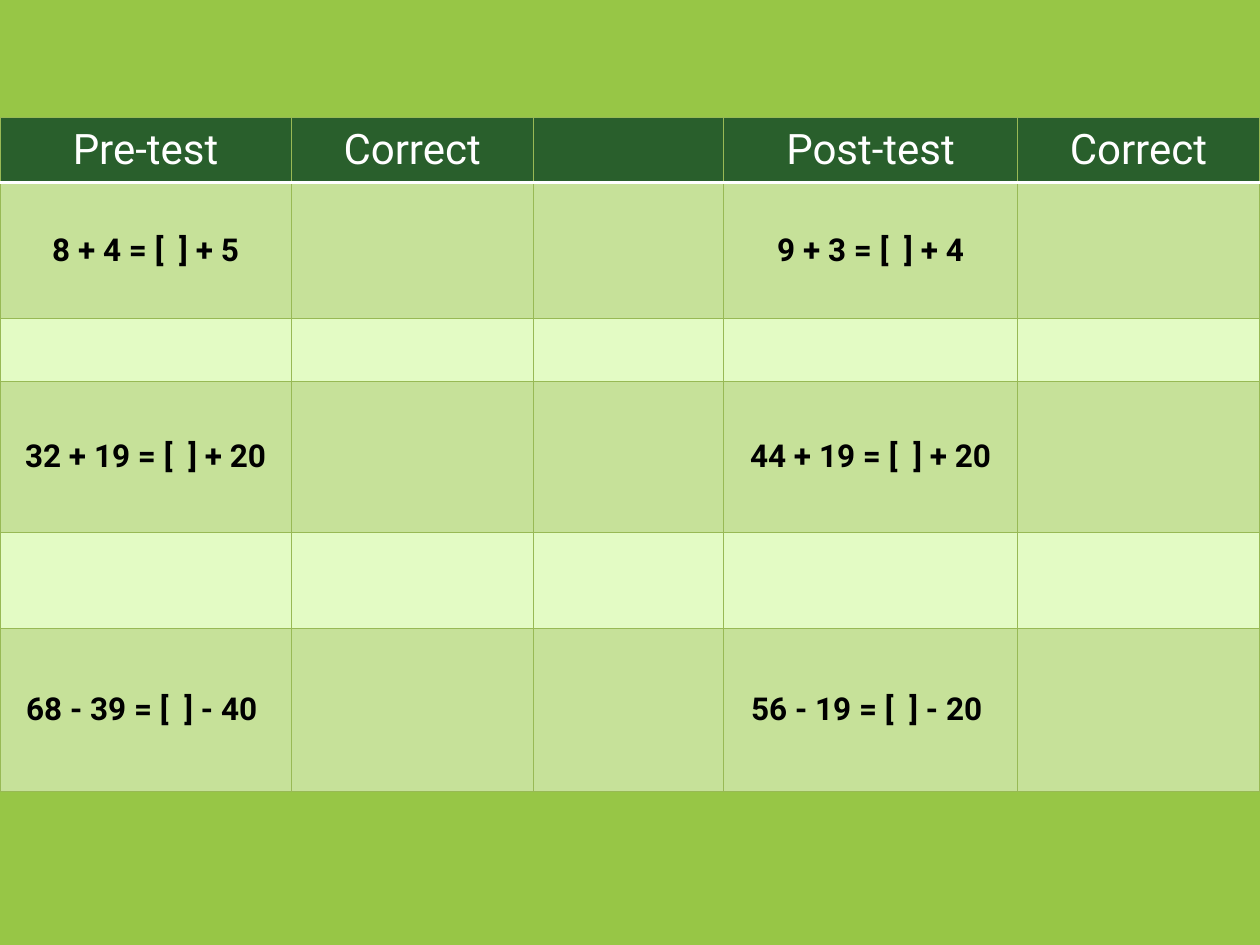
from dataclasses import dataclass
from lxml.etree import SubElement as Sub
from pptx import Presentation
from pptx.dml.color import RGBColor as Rgb
from pptx.enum.shapes import MSO_SHAPE as Kind
from pptx.enum.text import MSO_ANCHOR as Anchor, PP_ALIGN as Align
from pptx.oxml.ns import qn
from pptx.util import Cm, Pt


@dataclass(frozen=True)
class Theme:
    font: str = "Roboto"
    page: str = "97C646"
    head: str = "295F2C"
    band: str = "C6E199"
    pale: str = "E3FBC4"
    rule: str = "98B955"
    white: str = "FFFFFF"
    ink: str = "000000"
    large: int = 24
    small: int = 18
    thin: float = 0.75
    thick: float = 2


LOOK = Theme()
COLS = [5.87, 4.88, 3.84, 5.92, 4.88]
ROWS = [1.32, 2.74, 1.27, 3.05, 1.93, 3.28]
TEXT = [
    ["Pre-test", "Correct", "", "Post-test", "Correct"],
    ["8 + 4 = [  ] + 5", "", "", "9 + 3 = [  ] + 4", ""],
    [""] * 5,
    ["32 + 19 = [  ] + 20", "", "", "44 + 19 = [  ] + 20", ""],
    [""] * 5,
    ["68 - 39 = [  ] - 40 ", "", "", "56 - 19 = [  ] - 20 ", ""],
]


def paint(item, color):
    item.fill.solid()
    item.fill.fore_color.rgb = Rgb.from_string(color)


def add_page(slide, deck):
    page = slide.shapes.add_shape(Kind.RECTANGLE, 0, 0, deck.slide_width, deck.slide_height)
    page.shadow.inherit = False
    page.line.fill.background()
    paint(page, LOOK.page)


def add_edge(cell, side, color, width):
    edge = Sub(cell._tc.get_or_add_tcPr(), qn(f"a:ln{side}"), w=str(Pt(width)))
    Sub(Sub(edge, qn("a:solidFill")), qn("a:srgbClr"), val=color)


def add_edges(cell, row):
    bold = {0: "B", 1: "T"}.get(row)
    for side in "LRTB":
        if side == bold:
            add_edge(cell, side, LOOK.white, LOOK.thick)
        else:
            add_edge(cell, side, LOOK.rule, LOOK.thin)


def set_text(cell, text, head):
    cell.text = text
    cell.vertical_anchor = Anchor.MIDDLE
    cell.margin_left = cell.margin_right = Cm(0.16)
    cell.margin_top = cell.margin_bottom = Cm(0.16)
    para = cell.text_frame.paragraphs[0]
    para.alignment = Align.CENTER
    font = para.font
    font.name = LOOK.font
    font.size = Pt(LOOK.large if head else LOOK.small)
    font.bold = not head
    font.color.rgb = Rgb.from_string(LOOK.white if head else LOOK.ink)


def add_grid(slide):
    grid = slide.shapes.add_table(
        len(ROWS), len(COLS), 0, Cm(2.36), Cm(sum(COLS)), Cm(sum(ROWS))
    ).table
    for col, width in zip(grid.columns, COLS):
        col.width = Cm(width)
    for row, height in zip(grid.rows, ROWS):
        row.height = Cm(height)
    for r, line in enumerate(TEXT):
        color = LOOK.head if r == 0 else LOOK.band if r % 2 else LOOK.pale
        for c, text in enumerate(line):
            cell = grid.cell(r, c)
            add_edges(cell, r)
            paint(cell, color)
            if text:
                set_text(cell, text, r == 0)


def main():
    deck = Presentation()
    deck.slide_width, deck.slide_height = Cm(25.4), Cm(19.05)
    slide = deck.slides.add_slide(deck.slide_layouts[6])
    add_page(slide, deck)
    add_grid(slide)
    deck.save("out.pptx")


if __name__ == "__main__":
    main()
